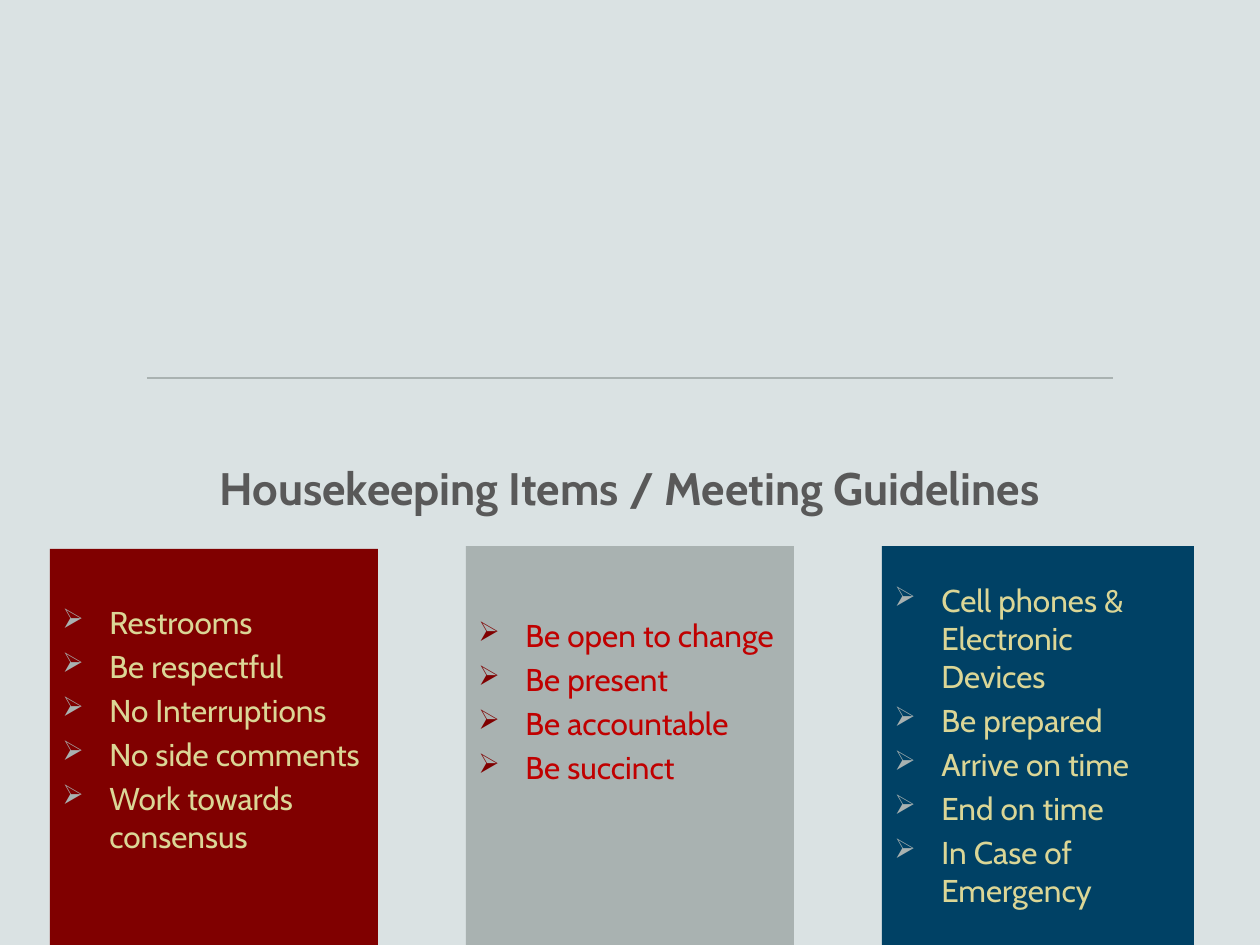
from lxml.etree import SubElement
from pptx import Presentation
from pptx.dml.color import RGBColor
from pptx.enum.shapes import MSO_CONNECTOR, MSO_SHAPE
from pptx.enum.text import MSO_ANCHOR, PP_ALIGN
from pptx.oxml.ns import qn
from pptx.util import Pt

PX = 914400 / 126
FONT = "Cabin"
BACK = RGBColor(0xDA, 0xE2, 0xE3)
INK = RGBColor(0x59, 0x59, 0x59)
GRAY = RGBColor(0xA9, 0xB2, 0xB1)
MAROON = RGBColor(0x80, 0x00, 0x00)
NAVY = RGBColor(0x00, 0x41, 0x65)
RED = RGBColor(0xC0, 0x00, 0x00)
SAND = RGBColor(0xDB, 0xD6, 0x96)

TITLE = "Housekeeping Items / Meeting Guidelines"
# Panels: top, width, space above text, fill, text colour, bullet colour, items
PANELS = [
    (549, 328, 54, MAROON, SAND, GRAY,
     ["Restrooms", "Be respectful", "No Interruptions",
      "No side comments", "Work towards consensus"]),
    (546, 328, 70, GRAY, RED, MAROON,
     ["Be open to change", "Be present", "Be accountable", "Be succinct"]),
    (546, 312, 35, NAVY, SAND, GRAY,
     ["Cell phones & Electronic Devices", "Be prepared", "Arrive on time",
      "End on time", "In Case of Emergency"]),
]
LEFT, STEP, HEIGHT, INDENT = 50, 416, 399, 47


def px(n):
    return round(n * PX)


def add_bullet(para, color):
    props = para._p.get_or_add_pPr()
    props.set("marL", str(px(INDENT)))
    props.set("indent", str(-px(INDENT)))
    tint = SubElement(props, qn("a:buClr"))
    SubElement(tint, qn("a:srgbClr"), val=str(color))
    SubElement(props, qn("a:buSzPct"), val="87000")
    SubElement(props, qn("a:buChar"), char="➢")


def write(frame, lines, size=18, color=INK, bold=False,
          align=PP_ALIGN.LEFT, bullet=None, gap=0):
    frame.word_wrap = True
    for i, line in enumerate(lines):
        para = frame.add_paragraph() if i else frame.paragraphs[0]
        if bullet is not None:
            add_bullet(para, bullet)
        para.alignment = align
        para.space_before = Pt(gap if i else 0)
        run = para.add_run()
        run.text = line
        font = run.font
        font.name, font.size, font.bold = FONT, Pt(size), bold
        font.color.rgb = color


deck = Presentation()
deck.slide_width, deck.slide_height = px(1260), px(945)
slide = deck.slides.add_slide(deck.slide_layouts[5])
slide.background.fill.solid()
slide.background.fill.fore_color.rgb = BACK
shapes = slide.shapes

# Rule above the title
rule = shapes.add_connector(MSO_CONNECTOR.STRAIGHT, px(147), px(378), px(1113), px(378))
rule.line.color.rgb = GRAY
rule.line.width = Pt(0.75)
SubElement(rule._element.spPr, qn("a:effectLst"))

# Title
title = shapes.title
title.left, title.top, title.width, title.height = map(px, (87, 451, 1086, 73))
title.text_frame.vertical_anchor = MSO_ANCHOR.MIDDLE
write(title.text_frame, [TITLE], size=26, bold=True, align=PP_ALIGN.CENTER)

# Three panels of guidelines
for i, (top, width, inset, fill, color, mark, items) in enumerate(PANELS):
    panel = shapes.add_shape(MSO_SHAPE.RECTANGLE, px(LEFT + i * STEP), px(top),
                             px(width), px(HEIGHT))
    panel.shadow.inherit = False
    panel.fill.solid()
    panel.fill.fore_color.rgb = fill
    panel.line.fill.background()
    frame = panel.text_frame
    frame.vertical_anchor = MSO_ANCHOR.TOP
    frame.margin_top = px(inset)
    write(frame, items, color=color, bullet=mark, gap=3.6)

deck.save("out.pptx")
